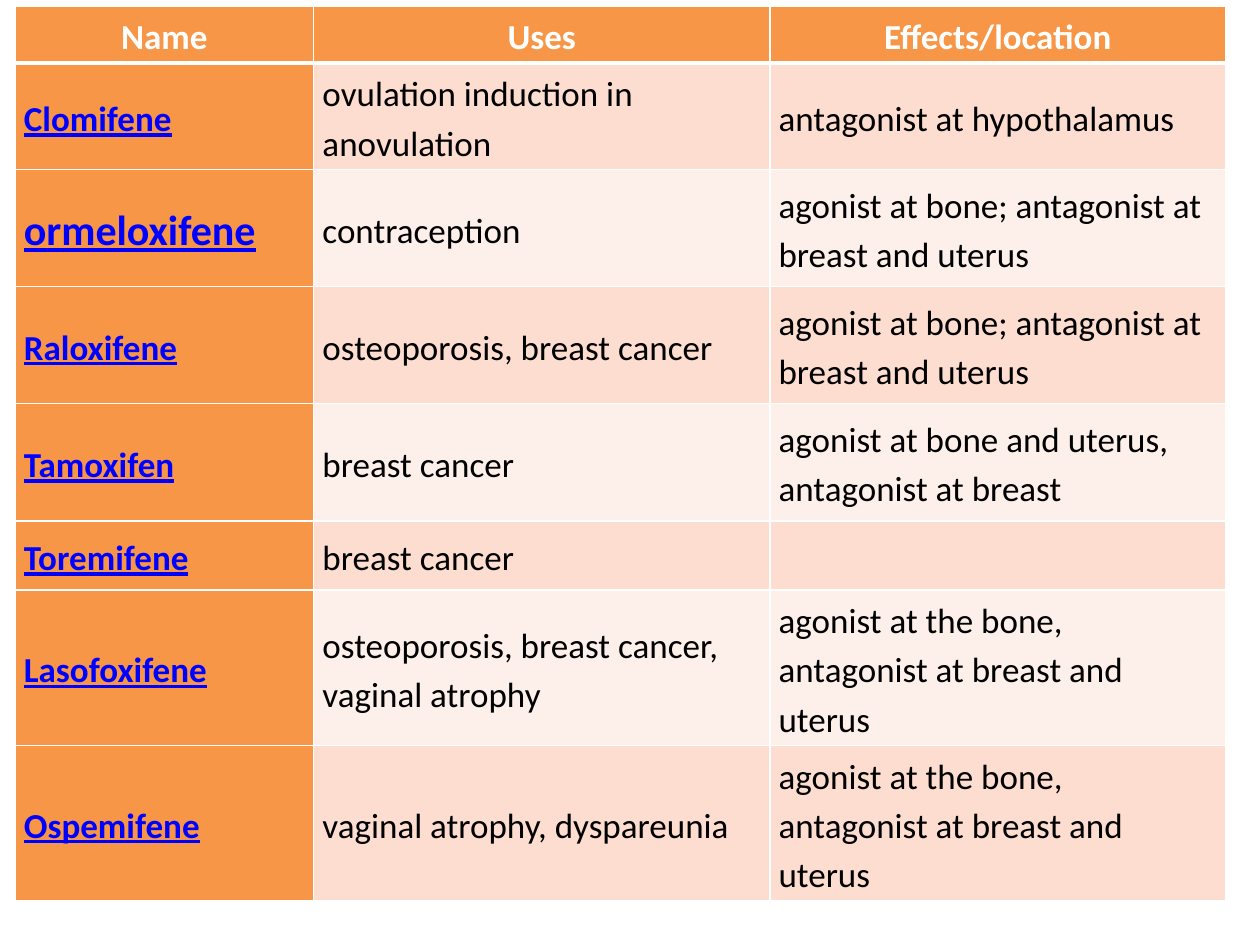
from lxml.etree import SubElement
from pptx import Presentation
from pptx.dml.color import RGBColor
from pptx.enum.text import MSO_ANCHOR, PP_ALIGN
from pptx.oxml.ns import qn
from pptx.util import Inches, Pt

# Content
HEADINGS = ("Name", "Uses", "Effects/location")
DRUGS = [
    ("Clomifene", "ovulation induction in anovulation", "antagonist at hypothalamus"),
    ("ormeloxifene", "contraception", "agonist at bone; antagonist at breast and uterus"),
    ("Raloxifene", "osteoporosis, breast cancer", "agonist at bone; antagonist at breast and uterus"),
    ("Tamoxifen", "breast cancer", "agonist at bone and uterus, antagonist at breast"),
    ("Toremifene", "breast cancer", ""),
    ("Lasofoxifene", "osteoporosis, breast cancer, vaginal atrophy",
     "agonist at the bone, antagonist at breast and uterus"),
    ("Ospemifene", "vaginal atrophy, dyspareunia",
     "agonist at the bone, antagonist at breast and uterus"),
]
LARGE_NAME = "ormeloxifene"

# Layout and colours
COLUMN_WIDTHS = (2.37, 3.62, 3.62)
ROW_HEIGHTS = (0.19, 0.63, 0.93, 0.93, 0.93, 0.55, 0.95, 0.95)
LEFT, TOP, TABLE_HEIGHT = 0.12, 0.05, 7.07
COLORS = {
    "accent": "F79646", "band_dark": "FCDDCF", "band_light": "FDEFE9",
    "white": "FFFFFF", "name": "0000FF", "body": "000000",
}


def write_text(cell, text, color="body", size=20, bold=False, underline=False,
               align=PP_ALIGN.LEFT):
    cell.vertical_anchor = MSO_ANCHOR.MIDDLE
    cell.margin_left = cell.margin_right = Inches(0.07)
    cell.margin_top = cell.margin_bottom = Inches(0.03)
    paragraph = cell.text_frame.paragraphs[0]
    paragraph.alignment = align
    paragraph.line_spacing = 1.15
    paragraph.space_before = paragraph.space_after = Pt(12)
    run = paragraph.add_run()
    run.text = text
    font = run.font
    font.name, font.size, font.bold, font.underline = "Calibri", Pt(size), bold, underline
    font.color.rgb = RGBColor.from_string(COLORS[color])


def style_cell(cell, fill, top=1, bottom=1):
    # Borders come before the fill in the cell properties
    properties = cell._tc.get_or_add_tcPr()
    for side, width in (("L", 1), ("R", 1), ("T", top), ("B", bottom)):
        line = SubElement(properties, qn(f"a:ln{side}"), w=str(Pt(width)))
        solid = SubElement(line, qn("a:solidFill"))
        SubElement(solid, qn("a:srgbClr"), val=COLORS["white"])
    cell.fill.solid()
    cell.fill.fore_color.rgb = RGBColor.from_string(COLORS[fill])


def main():
    presentation = Presentation()
    presentation.slide_width, presentation.slide_height = Inches(10), Inches(7.5)
    slide = presentation.slides.add_slide(presentation.slide_layouts[6])

    # Table grid
    frame = slide.shapes.add_table(
        len(DRUGS) + 1, len(HEADINGS), Inches(LEFT), Inches(TOP),
        Inches(sum(COLUMN_WIDTHS)), Inches(TABLE_HEIGHT))
    drug_table = frame.table
    drug_table.first_col = True
    for column, width in zip(drug_table.columns, COLUMN_WIDTHS):
        column.width = Inches(width)
    for row, height in zip(drug_table.rows, ROW_HEIGHTS):
        row.height = Inches(height)
    frame.height = Inches(TABLE_HEIGHT)

    # Header row
    for column, heading in enumerate(HEADINGS):
        cell = drug_table.cell(0, column)
        style_cell(cell, "accent", bottom=3)
        write_text(cell, heading, color="white", bold=True, align=PP_ALIGN.CENTER)

    # Drug rows: accent name column, banded details
    for row, drug in enumerate(DRUGS, start=1):
        band = "band_dark" if row % 2 else "band_light"
        for column, text in enumerate(drug):
            cell = drug_table.cell(row, column)
            is_name = column == 0
            style_cell(cell, "accent" if is_name else band, top=3 if row == 1 else 1)
            if is_name:
                write_text(cell, text, color="name", bold=True, underline=True,
                           size=24 if text == LARGE_NAME else 20)
            elif text:
                write_text(cell, text)

    presentation.save("out.pptx")


if __name__ == "__main__":
    main()
